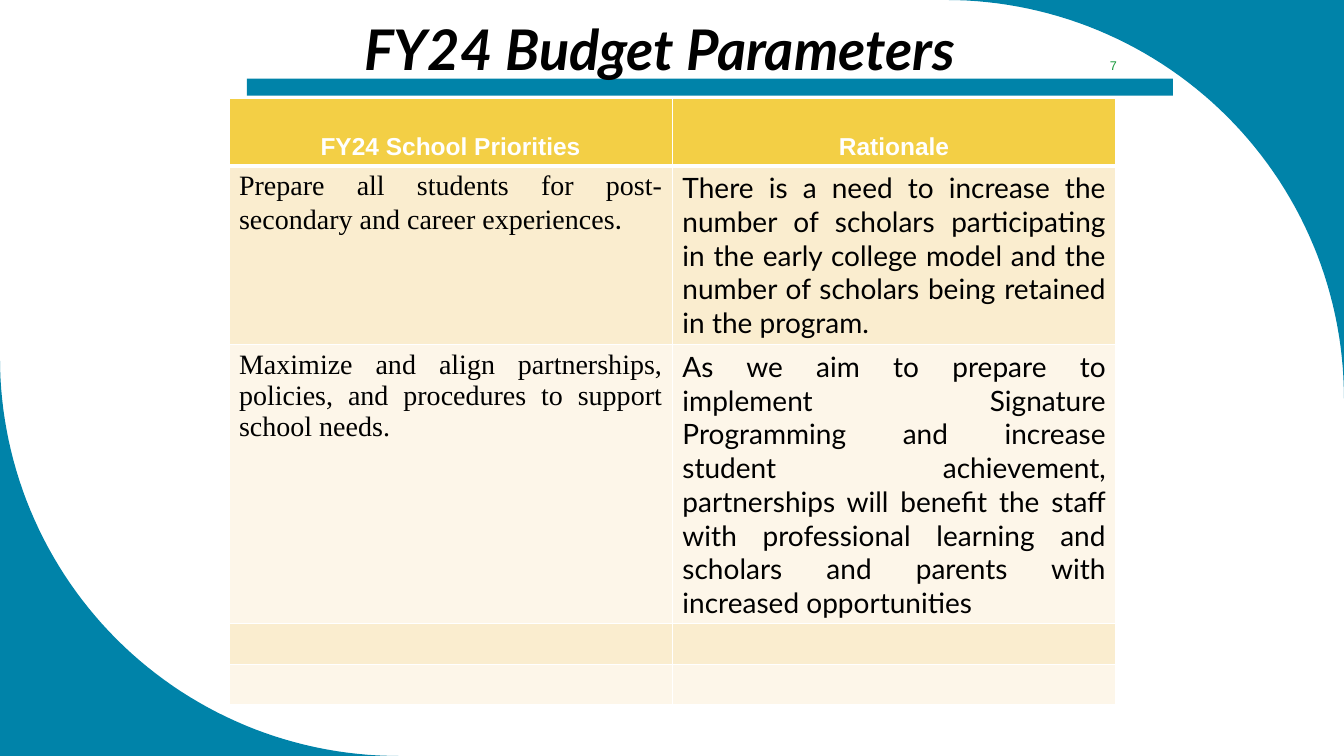
import math
from dataclasses import dataclass, field
from typing import Any

import lxml.etree
import pptx
import pptx.dml.color
import pptx.enum.shapes
import pptx.enum.text
import pptx.oxml.ns
import pptx.util

Cm = pptx.util.Cm
Pt = pptx.util.Pt
RGBColor = pptx.dml.color.RGBColor
Align = pptx.enum.text.PP_ALIGN
Anchor = pptx.enum.text.MSO_ANCHOR

TEAL = RGBColor(0x00, 0x83, 0xA9)
GOLD = RGBColor(0xF3, 0xCF, 0x45)
SAND = RGBColor(0xFA, 0xED, 0xCF)
CREAM = RGBColor(0xFD, 0xF6, 0xE9)
GREEN = RGBColor(0x15, 0x98, 0x39)
BLACK = RGBColor(0, 0, 0)
WHITE = RGBColor(0xFF, 0xFF, 0xFF)

TITLE = {"name": "Lato", "size": Pt(40), "bold": True, "italic": True, "color": BLACK}
HEAD = {"name": "Arial", "size": Pt(17.5), "bold": True, "color": WHITE}
LATO = {"name": "Lato", "size": Pt(20), "bold": False, "color": BLACK}
TIMES = LATO | {"name": "Times New Roman"}
NUMBER = {"name": "Arial", "size": Pt(9), "color": GREEN}

RADIUS = 10.04


@dataclass
class Run:
    text: str
    style: dict[str, Any]


@dataclass
class Label:
    box: tuple[float, float, float, float]
    run: Run
    anchor: Any


@dataclass
class Corner:
    tip: tuple[float, float]
    hub: tuple[float, float]
    start: int


@dataclass
class Row:
    height: float
    fill: RGBColor
    align: Any = Align.JUSTIFY
    anchor: Any = Anchor.TOP
    cells: list[list[Run]] = field(default_factory=lambda: [[], []])


CORNERS = [
    Corner((33.87, 0), (23.83, RADIUS), -90),
    Corner((0, 19.05), (RADIUS, 9.01), 90),
]
LABELS = [
    Label((7.75, 0.23, 17.75, 1.96), Run("FY24 Budget Parameters", TITLE), Anchor.TOP),
    Label((27.03, 1.27, 2.06, 0.76), Run("7", NUMBER), Anchor.MIDDLE),
]
ROWS = [
    Row(1.7, GOLD, Align.CENTER, Anchor.BOTTOM,
        [[Run("FY24 School Priorities", HEAD)], [Run("Rationale", HEAD)]]),
    Row(4.5, SAND, cells=[
        [Run("Prepare all students for post-secondary and career experiences", TIMES),
         Run(".", LATO)],
        [Run("There is a need to increase the number of scholars participating in the "
             "early college model and the number of scholars being retained in the "
             "program.", LATO)],
    ]),
    Row(7.04, CREAM, cells=[
        [Run("Maximize and align partnerships, policies, and procedures to support "
             "school needs.", TIMES)],
        [Run("As we aim to prepare to implement Signature Programming and increase "
             "student achievement, partnerships will benefit the staff with professional "
             "learning and scholars and parents with increased opportunities", LATO)],
    ]),
    Row(1, SAND),
    Row(1, CREAM),
]


def add_run(para: Any, item: Run) -> None:
    run = para.add_run()
    run.text = item.text
    for key, value in item.style.items():
        if key == "color":
            run.font.color.rgb = value
        else:
            setattr(run.font, key, value)


def paint(shape: Any, color: RGBColor) -> None:
    shape.shadow.inherit = False
    shape.fill.solid()
    shape.fill.fore_color.rgb = color
    shape.line.fill.background()


def draw_corner(slide: Any, corner: Corner) -> None:
    angles = [math.radians(corner.start + 1.5 * step) for step in range(61)]
    curve = [(Cm(corner.hub[0] + RADIUS * math.cos(a)),
              Cm(corner.hub[1] + RADIUS * math.sin(a))) for a in angles]
    build = slide.shapes.build_freeform(Cm(corner.tip[0]), Cm(corner.tip[1]))
    build.add_line_segments(curve, close=True)
    paint(build.convert_to_shape(), TEAL)


def draw_label(slide: Any, label: Label) -> None:
    frame = slide.shapes.add_textbox(*map(Cm, label.box)).text_frame
    frame.word_wrap = True
    frame.vertical_anchor = label.anchor
    para = frame.paragraphs[0]
    para.alignment = Align.CENTER
    add_run(para, label.run)


def add_edges(cell: Any, base: float) -> None:
    props = cell._tc.get_or_add_tcPr()
    qn = pptx.oxml.ns.qn
    for side, width in {"L": 1, "R": 1, "T": 1, "B": base}.items():
        line = lxml.etree.SubElement(props, qn(f"a:ln{side}"), w=str(Pt(width)))
        fill = lxml.etree.SubElement(line, qn("a:solidFill"))
        lxml.etree.SubElement(fill, qn("a:srgbClr"), val=str(WHITE))


def draw_table(slide: Any, rows: list[Row]) -> None:
    total = sum(row.height for row in rows)
    table = slide.shapes.add_table(
        len(rows), 2, Cm(5.77), Cm(2.48), Cm(22.35), Cm(total)).table
    table.first_row = False
    table.horz_banding = False
    for index, row in enumerate(rows):
        table.rows[index].height = Cm(row.height)
        for cell, runs in zip(table.rows[index].cells, row.cells):
            add_edges(cell, 3 if index == 0 else 1)
            cell.fill.solid()
            cell.fill.fore_color.rgb = row.fill
            cell.vertical_anchor = row.anchor
            para = cell.text_frame.paragraphs[0]
            para.alignment = row.align
            for run in runs:
                add_run(para, run)


def main() -> None:
    deck = pptx.Presentation()
    deck.slide_width, deck.slide_height = Cm(33.87), Cm(19.05)
    slide = deck.slides.add_slide(deck.slide_layouts[6])
    for corner in CORNERS:
        draw_corner(slide, corner)
    bar = slide.shapes.add_shape(
        pptx.enum.shapes.MSO_SHAPE.RECTANGLE, Cm(6.22), Cm(1.98), Cm(23.34), Cm(0.43))
    paint(bar, TEAL)
    for label in LABELS:
        draw_label(slide, label)
    draw_table(slide, ROWS)
    deck.save("out.pptx")


if __name__ == "__main__":
    main()
